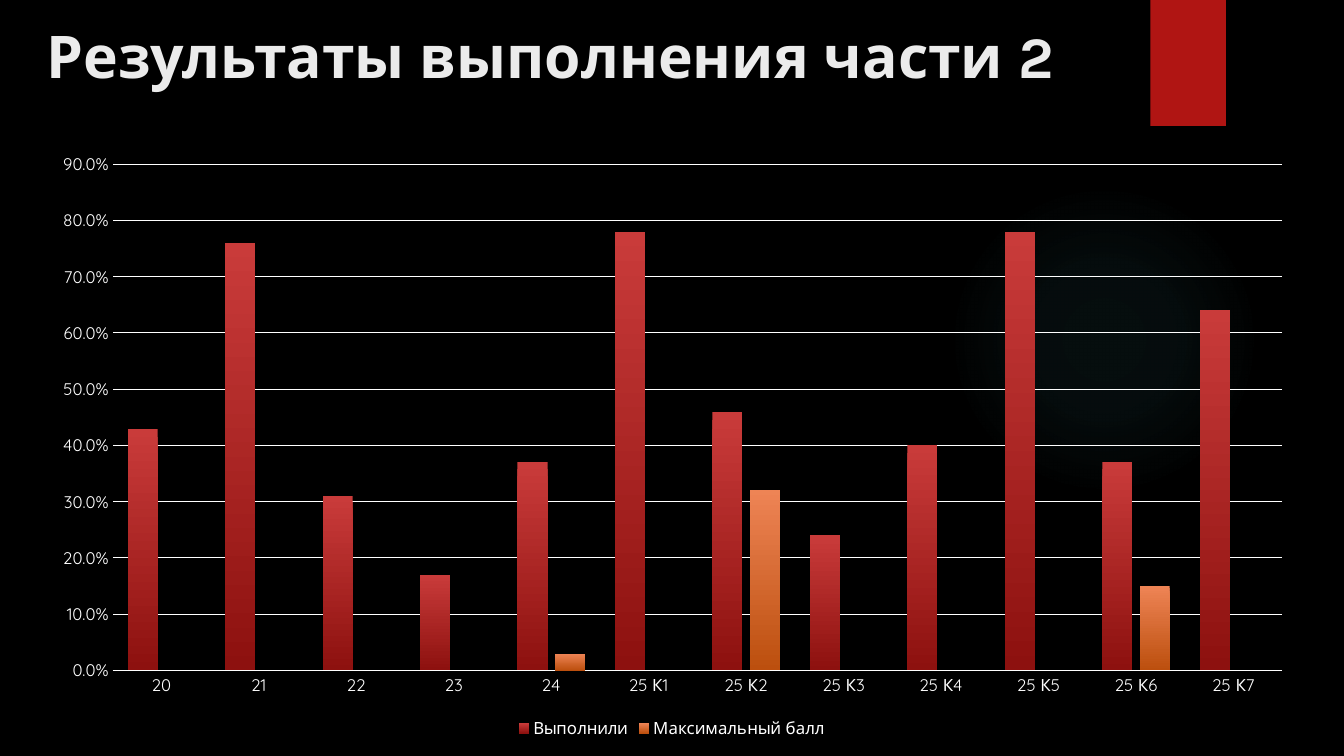
"""Build the slide with the part 2 results as a clustered column chart."""
from lxml import etree
from pptx import Presentation
from pptx.chart.data import CategoryChartData
from pptx.dml.color import RGBColor
from pptx.enum.chart import XL_CHART_TYPE, XL_LEGEND_POSITION, XL_TICK_MARK
from pptx.enum.shapes import MSO_SHAPE
from pptx.enum.text import MSO_ANCHOR, MSO_AUTO_SIZE, PP_ALIGN
from pptx.oxml import parse_xml
from pptx.oxml.ns import nsdecls, qn
from pptx.util import Inches, Pt

COLUMNS = XL_CHART_TYPE.COLUMN_CLUSTERED
BOTTOM = XL_LEGEND_POSITION.BOTTOM
NO_TICK = XL_TICK_MARK.NONE
OVAL, RECT = MSO_SHAPE.OVAL, MSO_SHAPE.RECTANGLE
TOP, LEFT, FIXED = MSO_ANCHOR.TOP, PP_ALIGN.LEFT, MSO_AUTO_SIZE.NONE

BLACK = RGBColor(0x00, 0x00, 0x00)
WHITE = RGBColor(0xFF, 0xFF, 0xFF)
TITLE_COLOR = RGBColor(0xEB, 0xEB, 0xEB)
RIBBON_RED = RGBColor(0xB0, 0x15, 0x13)
GLOW_TEAL = RGBColor(0x50, 0xB9, 0xC1)
RED_BARS = (RGBColor(0xC9, 0x3B, 0x3A), RGBColor(0x8D, 0x11, 0x0F))
ORANGE_BARS = (RGBColor(0xEE, 0x84, 0x55), RGBColor(0xBC, 0x4F, 0x0E))

TITLE = "Результаты выполнения части 2"
TASKS = ["20", "21", "22", "23", "24"] + [f"25 К{n}" for n in range(1, 8)]
COMPLETED = [0.43, 0.76, 0.31, 0.17, 0.37, 0.78,
             0.46, 0.24, 0.4, 0.78, 0.37, 0.64]
MAXIMUM = {"24": 0.03, "25 К2": 0.32, "25 К6": 0.15}
SERIES = [
    ("Выполнили", COMPLETED, RED_BARS),
    ("Максимальный балл", [MAXIMUM.get(task) for task in TASKS], ORANGE_BARS),
]
GLOW_STOPS = [(0, 7), (36, 6), (69, 0)]
PLOT_AREA = {"x": 0.06, "y": 0.04, "w": 0.92, "h": 0.84}

GLOW_BOX = (9.41, 1.83, 3.08, 3.08)
RIBBON_BOX = (11.41, 0, 0.75, 1.25)
TITLE_BOX = (0.36, 0.2, 11.03, 0.91)
CHART_BOX = (0.36, 1.39, 12.61, 5.98)


def box(lengths):
    return [Inches(n) for n in lengths]


def add_plain_shape(s, kind, lengths, color):
    sp = s.shapes.add_shape(kind, *box(lengths))
    sp.shadow.inherit = False
    sp.fill.solid()
    sp.fill.fore_color.rgb = color
    sp.line.fill.background()
    return sp


def add_glow(s):
    sp = add_plain_shape(s, OVAL, GLOW_BOX, GLOW_TEAL)
    stops = "".join(
        f'<a:gs pos="{pos * 1000}"><a:srgbClr val="{GLOW_TEAL}">'
        f'<a:alpha val="{alpha * 1000}"/></a:srgbClr></a:gs>'
        for pos, alpha in GLOW_STOPS)
    gradient = parse_xml(
        f'<a:gradFill {nsdecls("a")}><a:gsLst>{stops}</a:gsLst><a:path path="circle">'
        '<a:fillToRect l="50000" t="50000" r="50000" b="50000"/></a:path></a:gradFill>')
    sp_pr = sp.fill._xPr
    sp_pr.replace(sp_pr.find(qn("a:solidFill")), gradient)


def set_title(s):
    title = s.shapes.title
    title.left, title.top, title.width, title.height = box(TITLE_BOX)
    tf = title.text_frame
    tf.text = TITLE
    tf.word_wrap = True
    tf.auto_size = FIXED
    tf.vertical_anchor = TOP
    tf.margin_top = 0
    p = tf.paragraphs[0]
    p.alignment = LEFT
    style_font(p.runs[0].font, "Karla", 42, TITLE_COLOR)
    p.runs[0].font.bold = True


def style_font(font, name, size, color):
    font.name, font.size = name, Pt(size)
    font.color.rgb = color


def place_plot_area(chart):
    plot_area = chart._chartSpace.chart.plotArea
    for old in plot_area.findall(qn("c:layout")):
        plot_area.remove(old)
    layout = etree.Element(qn("c:layout"))
    manual = etree.SubElement(layout, qn("c:manualLayout"))
    settings = {"layoutTarget": "inner", "xMode": "edge", "yMode": "edge", **PLOT_AREA}
    for tag, value in settings.items():
        etree.SubElement(manual, qn(f"c:{tag}")).set("val", str(value))
    plot_area.insert(0, layout)


def add_results_chart(s):
    data = CategoryChartData(number_format="0.0%")
    data.categories = TASKS
    for name, values, _ in SERIES:
        data.add_series(name, values)
    chart = s.shapes.add_chart(COLUMNS, *box(CHART_BOX), data).chart
    chart.has_title = False
    chart.has_legend = True
    chart.legend.position = BOTTOM
    chart.legend.include_in_layout = False
    style_font(chart.font, "Quicksand", 10, WHITE)

    tasks, shares = chart.category_axis, chart.value_axis
    for part in (chart.legend.font, tasks.tick_labels.font, shares.tick_labels.font):
        style_font(part, "Quicksand", 12, WHITE)
    for axis in (tasks, shares):
        axis.major_tick_mark = axis.minor_tick_mark = NO_TICK
    tasks.format.line.color.rgb = WHITE
    tasks.format.line.width = Pt(1)
    shares.format.line.fill.background()
    shares.minimum_scale, shares.maximum_scale, shares.major_unit = 0, 0.9, 0.1
    shares.tick_labels.number_format = "0.0%"
    shares.tick_labels.number_format_is_linked = False
    grid = shares.major_gridlines.format.line
    grid.color.rgb, grid.width = WHITE, Pt(0.75)

    plot = chart.plots[0]
    plot.gap_width, plot.overlap, plot.vary_by_categories = 100, -24, False
    for series, (_, _, colors) in zip(plot.series, SERIES):
        fill = series.format.fill
        fill.gradient()
        fill.gradient_angle = 270
        for stop, color in zip(fill.gradient_stops, colors):
            stop.color.rgb = color
    place_plot_area(chart)


def main():
    prs = Presentation()
    prs.slide_width, prs.slide_height = Inches(13.33), Inches(7.5)
    s = prs.slides.add_slide(prs.slide_layouts[5])
    s.background.fill.solid()
    s.background.fill.fore_color.rgb = BLACK
    add_glow(s)
    add_plain_shape(s, RECT, RIBBON_BOX, RIBBON_RED)
    set_title(s)
    add_results_chart(s)
    prs.save("out.pptx")


if __name__ == "__main__":
    main()
